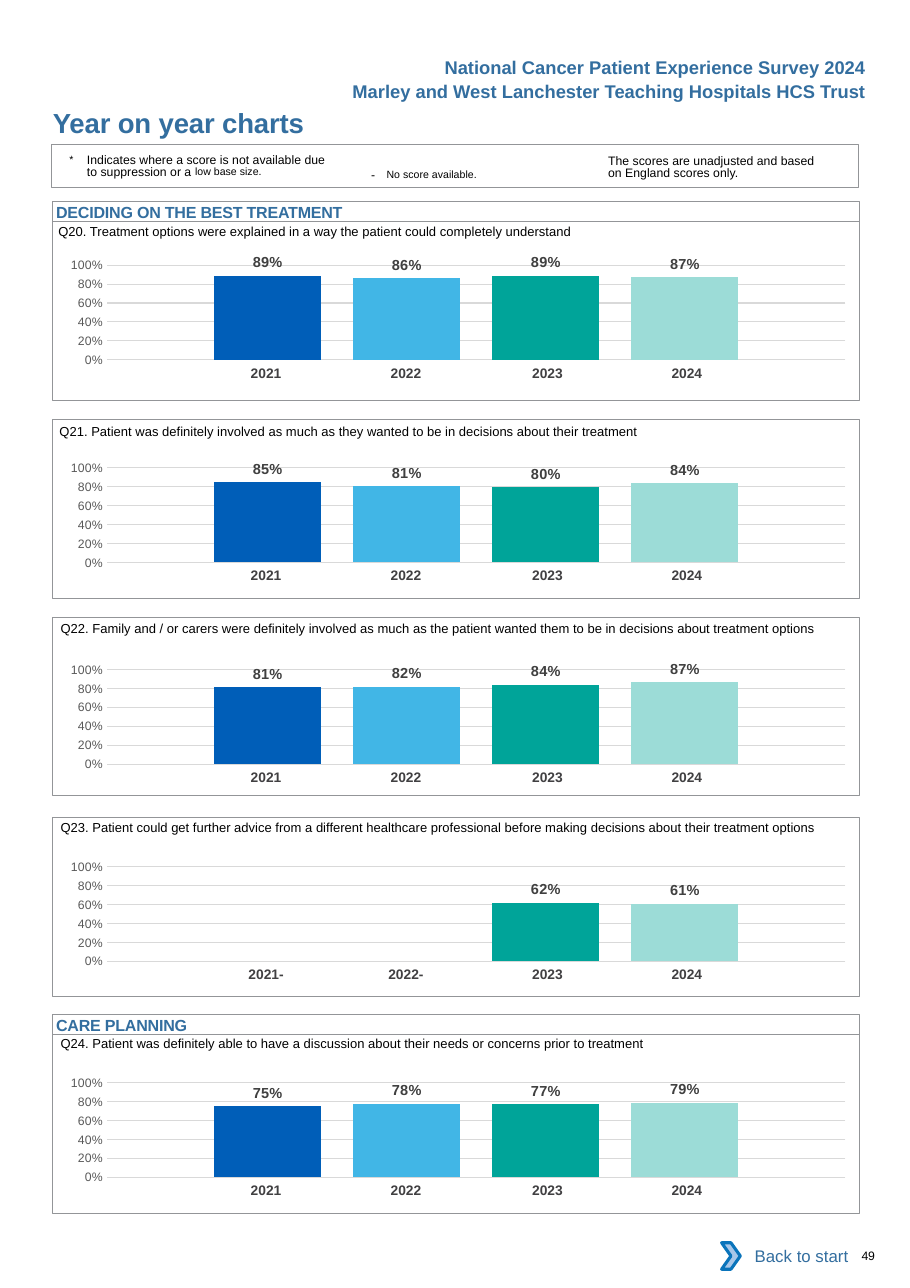
from lxml import etree
from pptx import Presentation
from pptx.chart import data
from pptx.dml import color
from pptx.enum import chart as ch, shapes, text
from pptx.oxml import ns
from pptx.util import Inches, Pt


class Theme:
    font, base = "Arial", "Calibri"
    blue, black, year, label, tick = "336E9F", "000000", "414042", "404040", "595959"
    edge, grid, white = "939598", "D9D9D9", "FFFFFF"
    bars = ["005EB8", "41B6E6", "00A499", "9CDCD7"]
    arrow, rim = "A8C7E9", "0A74BB"
    title, head, topic, back = 18, 12, 10.5, 11
    ask, note, mark, cat, value, axis = 8.5, 8, 12, 9, 9.5, 8


TITLES = [
    ("National Cancer Patient Experience Survey 2024", 0.46),
    ("Marley and West Lanchester Teaching Hospitals HCS Trust", 0.68),
]
TOPICS = [("DECIDING ON THE BEST TREATMENT", 1.83), ("CARE PLANNING", 9.21)]
YEARS = ["2021", "2022", "2023", "2024"]
PANELS = [
    dict(ask="Q20. Treatment options were explained in a way the patient could completely understand",
         vals=[0.89, 0.86, 0.89, 0.87], top=2.01, plot=2.22, line=1.94, left=0.53),
    dict(ask="Q21. Patient was definitely involved as much as they wanted to be in decisions about their treatment",
         vals=[0.85, 0.81, 0.8, 0.84], top=3.81, plot=4.06, line=3.75, left=0.54),
    dict(ask="Q22. Family and / or carers were definitely involved as much as the patient wanted them to be in decisions about treatment options",
         vals=[0.81, 0.82, 0.84, 0.87], top=5.6, plot=5.89, line=5.54, left=0.55),
    dict(ask="Q23. Patient could get further advice from a different healthcare professional before making decisions about their treatment options",
         vals=[None, None, 0.62, 0.61], top=7.42, plot=7.68, line=7.35, left=0.55),
    dict(ask="Q24. Patient was definitely able to have a discussion about their needs or concerns prior to treatment",
         vals=[0.75, 0.78, 0.77, 0.79], top=9.39, plot=9.64, line=9.31, left=0.55),
]
LEFT, WIDE, TALL = 0.48, 7.32, 1.62
COLS = [1.27, 1.27, 1.34, 1.27]
PADS = [0, 0, 0.04, 0.12]

deck = Presentation()
deck.slide_width, deck.slide_height = Inches(8.26), Inches(11.69)
page = deck.slides.add_slide(deck.slide_layouts[6])


def rgb(code):
    return color.RGBColor.from_string(code)


def place(*box):
    return [Inches(n) for n in box]


def style(font, size, ink, bold=False, name=Theme.font):
    font.size, font.bold, font.name = Pt(size), bold, name
    font.color.rgb = rgb(ink)


def write(frame, words, size=Theme.ask, ink=Theme.black, bold=False, align="LEFT",
          anchor="TOP", pad=(0, 0, 0, 0), wrap=True, hang=0, lead=None, space=0):
    frame.word_wrap = wrap
    frame.vertical_anchor = text.MSO_ANCHOR[anchor]
    (frame.margin_left, frame.margin_top,
     frame.margin_right, frame.margin_bottom) = place(*pad)
    para = frame.paragraphs[0]
    para.alignment = text.PP_ALIGN[align]
    if lead:
        para.line_spacing = Pt(lead)
    if hang:
        props = para._p.get_or_add_pPr()
        props.set("marL", str(Inches(hang)))
        props.set("indent", str(-Inches(hang)))
    runs = [(words, size, 0)] if isinstance(words, str) else words
    for piece, points, lift in runs:
        run = para.add_run()
        run.text = piece
        style(run.font, points, ink, bold)
        props = run._r.get_or_add_rPr()
        if lift:
            props.set("baseline", str(lift * 1000))
        if space:
            props.set("spc", str(int(space * 100)))


def label(words, box, **form):
    write(page.shapes.add_textbox(*place(*box)).text_frame, words, **form)


def block(box, kind="RECTANGLE", fill=None, line=None, width=0.5):
    item = page.shapes.add_shape(shapes.MSO_SHAPE[kind], *place(*box))
    item.shadow.inherit = False
    if fill:
        item.fill.solid()
        item.fill.fore_color.rgb = rgb(fill)
    else:
        item.fill.background()
    if line:
        item.line.color.rgb = rgb(line)
        item.line.width = Pt(width)
    else:
        item.line.fill.background()
    return item


def years(vals, top):
    grid = page.shapes.add_table(1, 4, *place(1.73, top, sum(COLS), 0.27)).table
    grid.first_row = grid.horz_banding = False
    grid.rows[0].height = Inches(0.27)
    for i, (year, val) in enumerate(zip(YEARS, vals)):
        grid.columns[i].width = Inches(COLS[i])
        cell = grid.cell(0, i)
        cell.fill.background()
        write(cell.text_frame, year if val else year + "-", size=Theme.cat,
              ink=Theme.year, bold=True, align="CENTER")
        (cell.margin_left, cell.margin_top,
         cell.margin_right, cell.margin_bottom) = place(0.1, 0.05, PADS[i], 0.05)


def bars(vals, top):
    info = data.CategoryChartData(number_format="0%")
    info.categories = ["1"]
    for i, val in enumerate(vals):
        info.add_series(f"Series {i + 1}", [val])
    chart = page.shapes.add_chart(ch.XL_CHART_TYPE.COLUMN_CLUSTERED,
                                  *place(0.39, top, WIDE, 1.29), info).chart
    chart.has_title = chart.has_legend = False
    style(chart.font, 10, Theme.black, name=Theme.base)
    chart.category_axis.visible = False
    axis = chart.value_axis
    axis.minimum_scale, axis.maximum_scale, axis.major_unit = 0, 1, 0.2
    axis.major_tick_mark = ch.XL_TICK_MARK.NONE
    axis.format.line.fill.background()
    rule = axis.major_gridlines.format.line
    rule.color.rgb, rule.width = rgb(Theme.grid), Pt(0.75)
    ticks = axis.tick_labels
    ticks.number_format, ticks.number_format_is_linked = "0%", False
    style(ticks.font, Theme.axis, Theme.tick)
    plot = chart.plots[0]
    plot.gap_width, plot.overlap, plot.vary_by_categories = 200, -30, False
    for series, ink in zip(plot.series, Theme.bars):
        series.format.fill.solid()
        series.format.fill.fore_color.rgb = rgb(ink)
        tags = series.data_labels
        tags.show_value, tags.position = True, ch.XL_LABEL_POSITION.OUTSIDE_END
        tags.number_format, tags.number_format_is_linked = "0%", False
        style(tags.font, Theme.value, Theme.label, True)
    area = chart._chartSpace.find(".//" + ns.qn("c:plotArea"))
    for old in area.findall(ns.qn("c:layout")):
        area.remove(old)
    layout = etree.Element(ns.qn("c:layout"))
    manual = etree.SubElement(layout, ns.qn("c:manualLayout"))
    for key, val in [("layoutTarget", "inner"), ("xMode", "edge"), ("yMode", "edge"),
                     ("x", 0.08), ("y", 0.145), ("w", 0.915), ("h", 0.666)]:
        etree.SubElement(manual, ns.qn("c:" + key)).set("val", str(val))
    area.insert(0, layout)


for words, top in TITLES:
    label(words, (2.96, top, 5, 0.3), size=Theme.head, ink=Theme.blue, bold=True,
          align="RIGHT", pad=(0.1, 0.05, 0.1, 0.05), wrap=False)
label("Year on year charts", (0.48, 0.96, 4.5, 0.3), size=Theme.title,
      ink=Theme.blue, bold=True, space=-0.1)

block((0.47, 1.31, WIDE, 0.39), line=Theme.edge, width=0.75)
label([("*\t", Theme.mark, 3),
       ("Indicates where a score is not available due to suppression or a ", Theme.note, 0),
       ("low base", Theme.mark, 7), (" size.", Theme.mark, 7)],
      (0.63, 1.38, 2.4, 0.27), pad=(0, 0.03, 0, 0), hang=0.16, lead=8.1)
label([("-\t", Theme.note, 0), ("No score available.", Theme.mark, 3)],
      (3.27, 1.41, 1.83, 0.24), pad=(0.1, 0.05, 0.1, 0.05), hang=0.14)
label("The scores are unadjusted and based on England scores only.",
      (5.52, 1.38, 2.01, 0.27), size=Theme.note, pad=(0, 0.03, 0, 0), lead=8.1)

for panel in PANELS:
    years(panel["vals"], panel["plot"] + 1.05)
    bars(panel["vals"], panel["plot"])
    block((LEFT, panel["top"], WIDE, TALL), line=Theme.edge)
    label(panel["ask"], (panel["left"], panel["line"], 7.24, 0.24), pad=(0, 0.09, 0, 0))
for words, top in TOPICS:
    write(block((LEFT, top, WIDE, 0.18), line=Theme.edge).text_frame, words,
          size=Theme.topic, ink=Theme.blue, bold=True, pad=(0.03, 0.01, 0, 0), space=-0.1)

write(block((6.62, 11.19, 1.18, 0.42), fill=Theme.white).text_frame, "Back to start",
      size=Theme.back, ink=Theme.blue, align="RIGHT", anchor="MIDDLE",
      pad=(0.1, 0.05, 0.1, 0.05))
block((6.55, 11.28, 0.17, 0.24), "CHEVRON", Theme.arrow, Theme.rim, 2)
label("49", (7.82, 11.33, 0.41, 0.13), size=Theme.note, space=-0.2)

deck.save("out.pptx")
